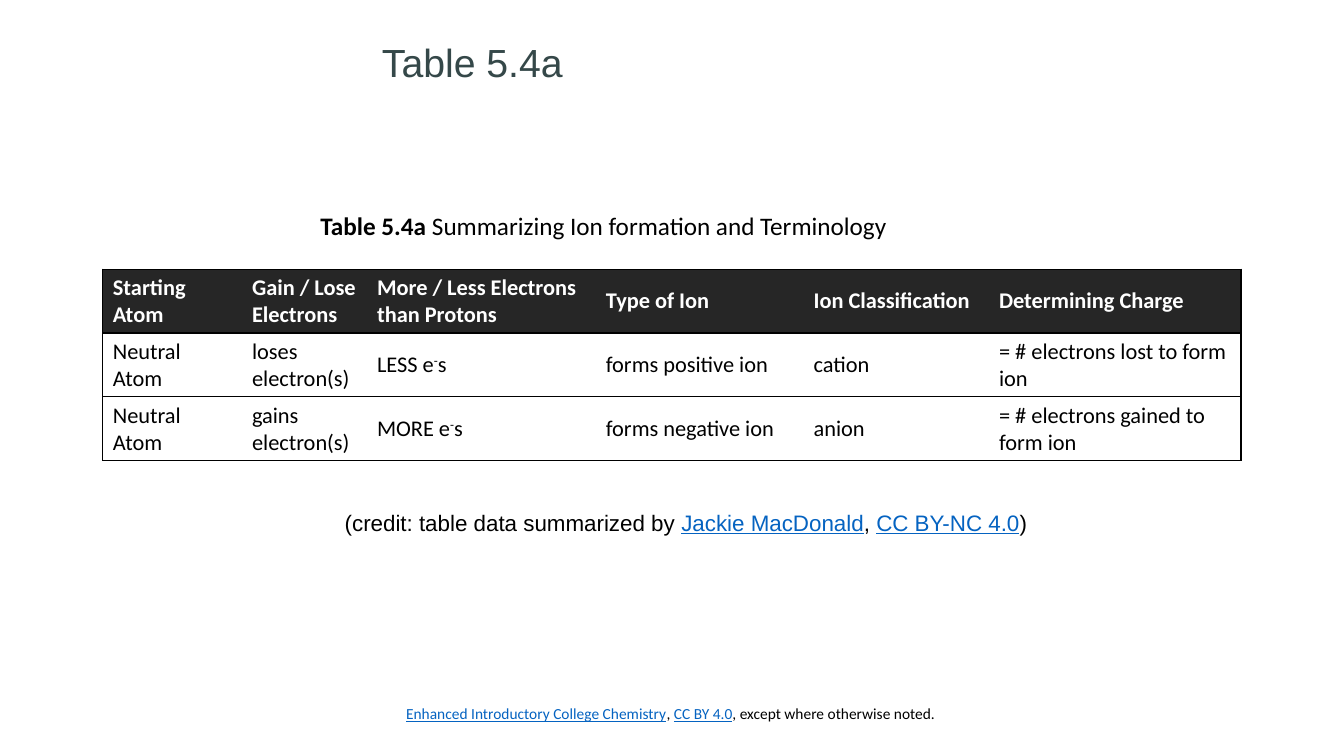
"""Build the Table 5.4a slide on ion formation and terminology."""
from dataclasses import dataclass

from lxml.etree import SubElement
from pptx import Presentation
from pptx.dml.color import RGBColor
from pptx.enum.text import MSO_ANCHOR, MSO_AUTO_SIZE
from pptx.oxml.ns import qn
from pptx.slide import Slide
from pptx.table import _Cell
from pptx.text.text import _Paragraph
from pptx.util import Inches, Pt

BLACK = RGBColor(0x00, 0x00, 0x00)
WHITE = RGBColor(0xFF, 0xFF, 0xFF)
CHARCOAL = RGBColor(0x26, 0x26, 0x26)
SLATE = RGBColor(0x35, 0x48, 0x49)
LINK_BLUE = RGBColor(0x05, 0x63, 0xC1)


@dataclass(frozen=True)
class Span:
    text: str
    color: RGBColor = BLACK
    bold: bool = False
    underline: bool = False
    superscript: bool = False


@dataclass(frozen=True)
class TextBlock:
    left: float
    top: float
    width: float
    height: float
    font: str
    size: int
    spans: tuple[Span, ...]
    anchor: MSO_ANCHOR = MSO_ANCHOR.TOP
    line_spacing: float = 1.0
    wrap: bool = True
    grow: bool = False


def link(text: str) -> Span:
    return Span(text, LINK_BLUE, underline=True)


def electrons(amount: str) -> tuple[Span, ...]:
    return Span(f"{amount} e"), Span("-", superscript=True), Span("s")


TEXT_BLOCKS = (
    TextBlock(3.93, 6.94, 7.07, 0.4, "Calibri", 11,
              (link("Enhanced Introductory College Chemistry"), Span(", "),
               link("CC BY 4.0"), Span(", except where otherwise noted."))),
    TextBlock(3.69, 0.2, 4.3, 0.7, "Arial", 28, (Span("Table 5.4a", SLATE),),
              anchor=MSO_ANCHOR.BOTTOM, line_spacing=0.9),
    TextBlock(3.08, 2.04, 7.17, 0.4, "Calibri", 18,
              (Span("Table 5.4a ", bold=True),
               Span("Summarizing Ion formation and Terminology")), grow=True),
    TextBlock(3.32, 5, 7.05, 0.37, "Arial", 16,
              (Span("(credit: table data summarized by "), link("Jackie MacDonald"),
               Span(", "), link("CC BY-NC 4.0"), Span(")")), wrap=False, grow=True),
)

COLUMN_WIDTHS = (1.38, 1.24, 2.27, 2.06, 1.84, 2.5)
TABLE_HEIGHT = 1.9
HEADERS = ("Starting Atom", "Gain / Lose Electrons", "More / Less Electrons than Protons",
           "Type of Ion", "Ion Classification", "Determining Charge")
ION_ROWS = (
    ("Neutral Atom", "loses electron(s)", electrons("LESS"), "forms positive ion",
     "cation", "= # electrons lost to form ion"),
    ("Neutral Atom", "gains electron(s)", electrons("MORE"), "forms negative ion",
     "anion", "= # electrons gained to form ion"),
)


def write_spans(para: _Paragraph, spans: tuple[Span, ...], font: str, size: int) -> None:
    for span in spans:
        run = para.add_run()
        run.text = span.text
        run.font.name = font
        run.font.size = Pt(size)
        run.font.bold = span.bold
        run.font.underline = span.underline
        run.font.color.rgb = span.color
        if span.superscript:
            run._r.get_or_add_rPr().set("baseline", "30000")


def add_text(page: Slide, block: TextBlock) -> None:
    box = page.shapes.add_textbox(Inches(block.left), Inches(block.top),
                                  Inches(block.width), Inches(block.height))
    frame = box.text_frame
    frame.word_wrap = block.wrap
    frame.auto_size = MSO_AUTO_SIZE.SHAPE_TO_FIT_TEXT if block.grow else MSO_AUTO_SIZE.NONE
    frame.vertical_anchor = block.anchor
    para = frame.paragraphs[0]
    para.line_spacing = block.line_spacing
    write_spans(para, block.spans, block.font, block.size)


def set_borders(cell: _Cell, visible_sides: str) -> None:
    properties = cell._tc.get_or_add_tcPr()
    for side in "LRTB":
        line = SubElement(properties, qn(f"a:ln{side}"), w=str(Pt(1)))
        if side in visible_sides:
            fill = SubElement(line, qn("a:solidFill"))
            SubElement(fill, qn("a:srgbClr"), val=str(BLACK))
        else:
            SubElement(line, qn("a:noFill"))


def add_ion_table(page: Slide) -> None:
    rows = (HEADERS, *ION_ROWS)
    table = page.shapes.add_table(len(rows), len(HEADERS), Inches(1.02), Inches(2.67),
                                  Inches(sum(COLUMN_WIDTHS)), Inches(TABLE_HEIGHT)).table
    for column, width in zip(table.columns, COLUMN_WIDTHS):
        column.width = Inches(width)
    last_column = len(HEADERS) - 1
    for row_index, row in enumerate(rows):
        is_header = row_index == 0
        for column_index, content in enumerate(row):
            cell = table.cell(row_index, column_index)
            set_borders(cell, "TB" + {0: "L", last_column: "R"}.get(column_index, ""))
            cell.fill.solid()
            cell.fill.fore_color.rgb = CHARCOAL if is_header else WHITE
            cell.vertical_anchor = MSO_ANCHOR.MIDDLE
            if isinstance(content, str):
                content = (Span(content, WHITE if is_header else BLACK, bold=is_header),)
            write_spans(cell.text_frame.paragraphs[0], content, "Calibri", 16)


def main() -> None:
    deck = Presentation()
    deck.slide_width = Inches(13.33)
    deck.slide_height = Inches(7.5)
    page = deck.slides.add_slide(deck.slide_layouts[6])
    for block in TEXT_BLOCKS:
        add_text(page, block)
    add_ion_table(page)
    deck.save("out.pptx")


if __name__ == "__main__":
    main()
